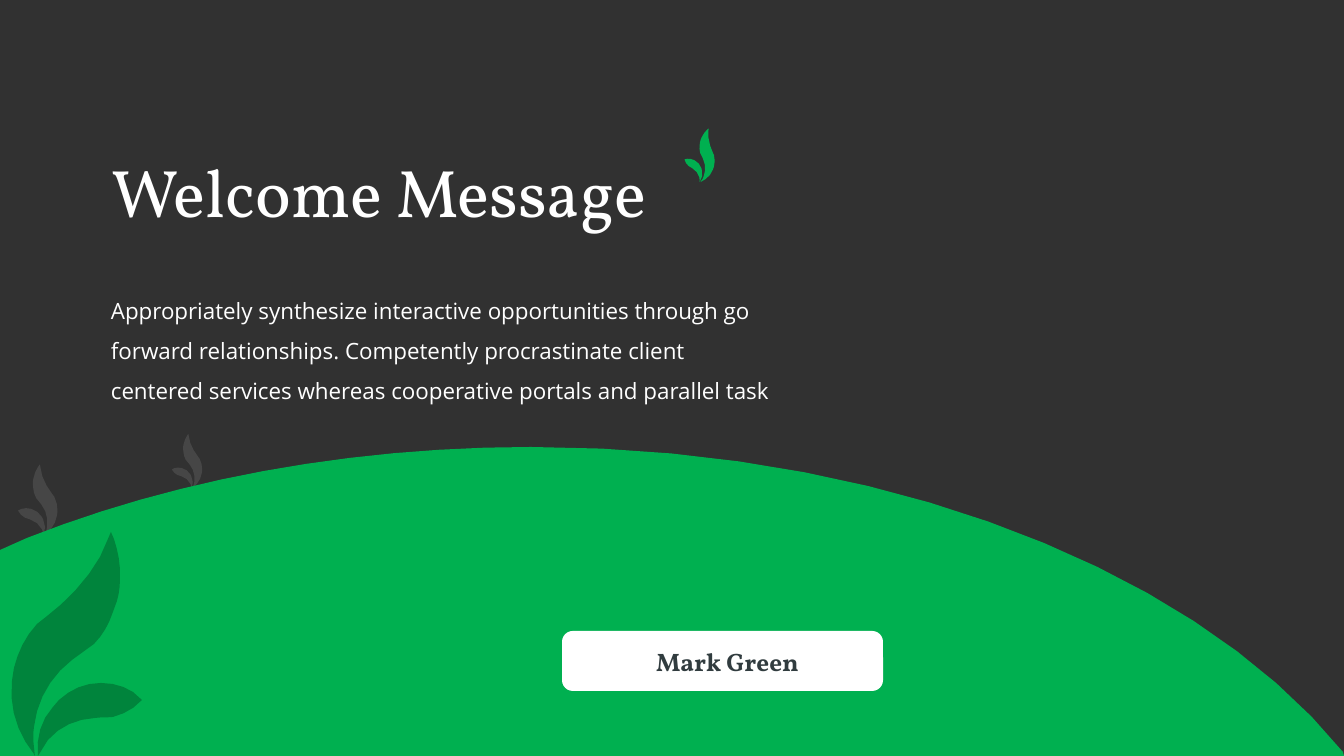
"""Build a dark welcome slide with a green hill, leaves and a name plate."""
import math
from dataclasses import dataclass

from lxml import etree
from pptx import Presentation
from pptx.dml.color import RGBColor
from pptx.enum.shapes import MSO_SHAPE
from pptx.enum.text import MSO_ANCHOR, MSO_AUTO_SIZE, PP_ALIGN
from pptx.oxml.ns import qn
from pptx.util import Pt

ROUNDED = MSO_SHAPE.ROUNDED_RECTANGLE
TOP, MIDDLE = MSO_ANCHOR.TOP, MSO_ANCHOR.MIDDLE
LEFT, CENTER = PP_ALIGN.LEFT, PP_ALIGN.CENTER
GROW, FIXED = MSO_AUTO_SIZE.SHAPE_TO_FIT_TEXT, MSO_AUTO_SIZE.NONE


@dataclass(frozen=True)
class Theme:
    """Colours, fonts and type sizes."""
    background: str = "313131"
    green: str = "00B050"
    dark_green: str = "00843C"
    white: str = "FFFFFF"
    ink: str = "313C3F"
    serif: str = "Vollkorn"
    sans: str = "Open Sans"
    title_size: int = 48
    body_size: int = 16
    name_size: int = 18


THEME = Theme()
EMU_PER_PX = 914400 / 100.8
SLIDE_SIZE = (1344, 756)

TITLE = "Welcome Message"
MESSAGE = ("Appropriately synthesize interactive opportunities through go forward "
           "relationships. Competently procrastinate client centered services whereas "
           "cooperative portals and parallel task")
SPEAKER = "Mark Green"

TITLE_BOX = (102, 145, 1008, 101)
MESSAGE_BOX = (101, 280, 689, 128)
PLATE_BOX = (562, 631, 321, 60)
SPEAKER_BOX = (569, 641, 317, 40)
PLATE_ROUNDING = 0.18

HILL = [(531, 447), (889, 447, 1197, 572, 1343, 752), (1344, 756), (0, 756),
        (0, 550), (27, 538), (171, 481, 345, 447, 531, 447)]
BLADE = [(111, 532), (114, 539), (118, 551, 121, 565, 120, 580),
         (120, 587, 119, 594, 117, 601), (113, 612),
         (109, 624, 103, 635, 94, 644), (72, 660),
         (51, 676, 37, 700, 34, 727), (33, 734, 33, 740, 34, 747),
         (35, 756), (34, 754), (18, 734, 9, 709, 12, 681), (14, 668),
         (18, 652, 25, 637, 37, 624), (46, 617), (71, 598, 98, 569, 108, 539)]
PETAL = [(133, 692), (142, 700), (134, 709, 124, 714, 113, 717),
         (104, 718, 101, 717, 95, 718), (77, 719, 60, 726, 48, 740),
         (38, 756), (36, 738, 41, 720, 53, 707), (59, 700),
         (71, 689, 85, 683, 101, 683), (113, 683, 124, 686, 133, 692)]
LEAF = [BLADE, PETAL]
LEAF_BASE = (37, 756)

FAINT_LEAVES = [((192, 488), 0.23, 14.5), ((44, 535), 0.3, 15)]
TITLE_LEAF = ((700, 182), 0.23, 27.5)


def emu(pixels):
    """Turn pixels into EMU."""
    return round(pixels * EMU_PER_PX)


def flatten(outline):
    """Turn lines and cubic curves into points, with more steps on longer curves."""
    points = [outline[0]]
    for segment in outline[1:]:
        if len(segment) == 2:
            points.append(segment)
            continue
        knots = [points[-1], segment[:2], segment[2:4], segment[4:]]
        steps = math.ceil(math.sqrt(math.dist(knots[0], knots[3])) / 2)
        for step in range(1, steps + 1):
            t = step / steps
            weights = [math.comb(3, i) * t**i * (1 - t)**(3 - i) for i in range(4)]
            points.append(tuple(sum(weight * knot[axis] for weight, knot in zip(weights, knots))
                                for axis in (0, 1)))
    return points


def place_leaf(base, scale, degrees):
    """Mirror, scale and turn the leaf about its base."""
    cosine, sine = math.cos(math.radians(degrees)), math.sin(math.radians(degrees))

    def place(segment):
        placed = []
        for x, y in zip(segment[::2], segment[1::2]):
            across, down = (LEAF_BASE[0] - x) * scale, (y - LEAF_BASE[1]) * scale
            placed += [base[0] + across * cosine - down * sine,
                       base[1] + across * sine + down * cosine]
        return tuple(placed)

    return [[place(segment) for segment in outline] for outline in LEAF]


def paint(shape, color, opacity=100):
    """Give a shape a plain fill without line or shadow."""
    shape.shadow.inherit = False
    shape.fill.solid()
    shape.fill.fore_color.rgb = RGBColor.from_string(color)
    shape.line.fill.background()
    if opacity < 100:
        color_element = shape._element.spPr.find(qn("a:solidFill"))[0]
        etree.SubElement(color_element, qn("a:alpha")).set("val", str(opacity * 1000))


def add_outlines(slide, outlines, color, opacity=100):
    """Draw closed outlines as one freeform."""
    contours = [[(emu(x), emu(y)) for x, y in flatten(outline)] for outline in outlines]
    builder = slide.shapes.build_freeform(*contours[0][0], scale=1.0)
    for index, contour in enumerate(contours):
        if index:
            builder.move_to(*contour[0])
        builder.add_line_segments(contour[1:], close=True)
    paint(builder.convert_to_shape(), color, opacity)


def add_text(slide, box, text, font, size, color, spacing=1.0,
             align=LEFT, anchor=TOP, fit=GROW, bold=False):
    """Add a wrapped text box with one run."""
    frame = slide.shapes.add_textbox(*map(emu, box)).text_frame
    frame.word_wrap = True
    frame.auto_size = fit
    frame.vertical_anchor = anchor
    paragraph = frame.paragraphs[0]
    paragraph.alignment = align
    paragraph.line_spacing = spacing
    run = paragraph.add_run()
    run.text = text
    run.font.name = font
    run.font.size = Pt(size)
    run.font.bold = bold
    run.font.color.rgb = RGBColor.from_string(color)


def main():
    """Build and save the slide."""
    presentation = Presentation()
    presentation.slide_width, presentation.slide_height = map(emu, SLIDE_SIZE)
    slide = presentation.slides.add_slide(presentation.slide_layouts[6])
    slide.background.fill.solid()
    slide.background.fill.fore_color.rgb = RGBColor.from_string(THEME.background)

    for placement in FAINT_LEAVES:
        add_outlines(slide, place_leaf(*placement), THEME.white, 10)
    add_outlines(slide, [HILL], THEME.green)
    add_text(slide, TITLE_BOX, TITLE, THEME.serif, THEME.title_size, THEME.white,
             spacing=0.9, anchor=MIDDLE, fit=FIXED)
    add_text(slide, MESSAGE_BOX, MESSAGE, THEME.sans, THEME.body_size, THEME.white,
             spacing=1.5, anchor=MIDDLE)
    add_outlines(slide, LEAF, THEME.dark_green)

    plate = slide.shapes.add_shape(ROUNDED, *map(emu, PLATE_BOX))
    plate.adjustments[0] = PLATE_ROUNDING
    paint(plate, THEME.white)
    add_text(slide, SPEAKER_BOX, SPEAKER, THEME.serif, THEME.name_size, THEME.ink,
             align=CENTER, bold=True)
    add_outlines(slide, place_leaf(*TITLE_LEAF), THEME.green)
    presentation.save("out.pptx")


if __name__ == "__main__":
    main()
